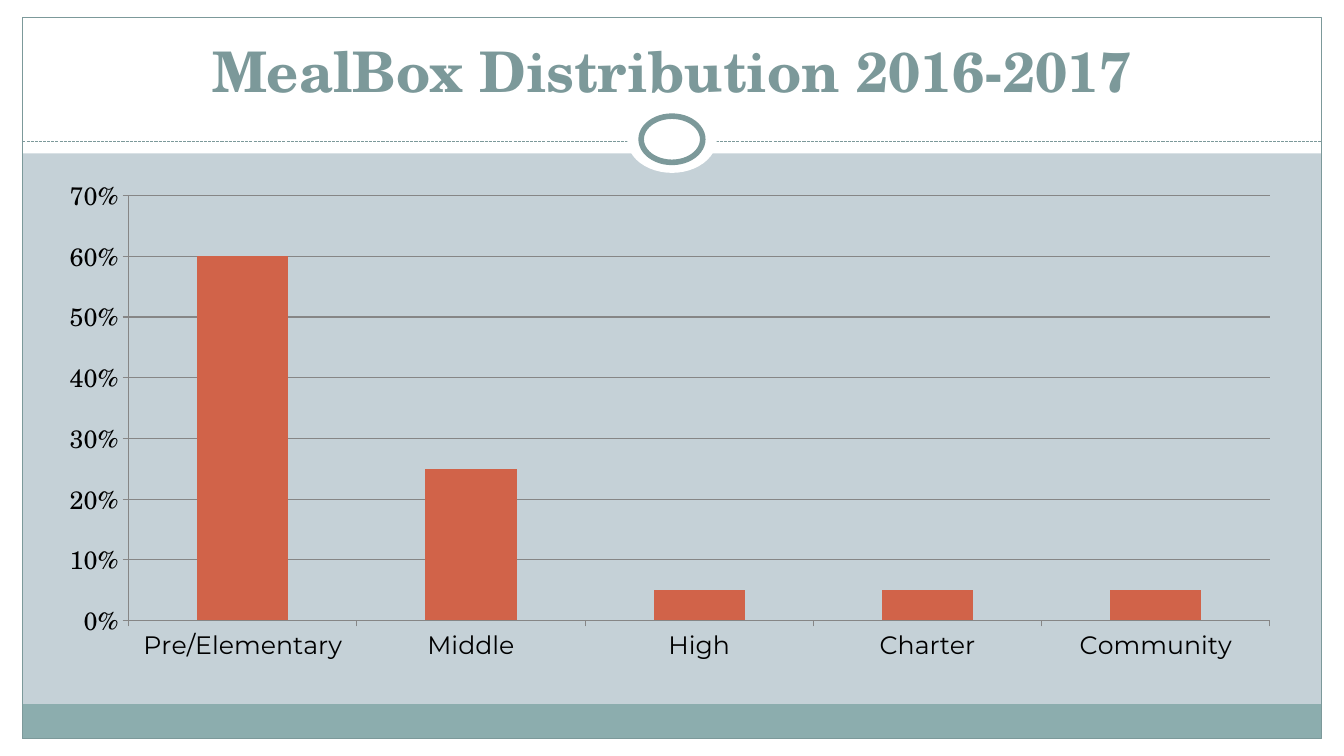
from dataclasses import dataclass

from lxml import etree
from pptx import Presentation
from pptx import util as u
from pptx.chart.data import CategoryChartData
from pptx.dml.color import RGBColor
from pptx.enum import chart as charts
from pptx.enum import dml, shapes, text
from pptx.oxml import parse_xml
from pptx.oxml.ns import qn

Pt = u.Pt
WHITE = RGBColor(0xFF, 0xFF, 0xFF)
BLACK = RGBColor(0, 0, 0)
MIST = RGBColor(0xC5, 0xD1, 0xD7)
SAGE = RGBColor(0x8C, 0xAD, 0xAE)
TEAL = RGBColor(0x7C, 0x99, 0x9A)
RUST = RGBColor(0xD1, 0x63, 0x49)
GRAY = RGBColor(0x86, 0x86, 0x86)
SERIF, SANS = "TeX Gyre Schola", "Montserrat"

WIDTH, HEIGHT = 960, 540
MARGIN, TOP, BOTTOM = 16, 12.24, 527.76
INNER = WIDTH - 2 * MARGIN
RULE_Y = 100.8
RECT, OVAL = shapes.MSO_SHAPE.RECTANGLE, shapes.MSO_SHAPE.OVAL


@dataclass
class Panel:
    left: float
    top: float
    width: float
    height: float
    fill: RGBColor | None = WHITE
    line_width: float = 0
    kind: shapes.MSO_SHAPE = RECT


def medallion(width: float, height: float, line_width: float = 0) -> Panel:
    """An ellipse centred on the dashed rule."""
    return Panel((WIDTH - width) / 2, 99.5 - height / 2, width, height,
                 line_width=line_width, kind=OVAL)


FRAME = [
    Panel(0, BOTTOM, WIDTH, HEIGHT - BOTTOM),
    Panel(0, 0, WIDTH, 109.5),
    Panel(0, 0, MARGIN, HEIGHT),
    Panel(WIDTH - MARGIN, 0, MARGIN, HEIGHT),
    Panel(MARGIN, 503, INNER, BOTTOM - 503, SAGE),
    Panel(MARGIN, TOP, INNER, BOTTOM - TOP, None, 0.75),
]
MEDALLIONS = [medallion(64, 48), medallion(44, 33, 4)]
SHARES = {"Pre/Elementary": 0.6, "Middle": 0.25, "High": 0.05,
          "Charter": 0.05, "Community": 0.05}
PLOT_LAYOUT = {"x": 0.067, "y": 0.055, "w": 0.913, "h": 0.843}


def assign(target, values: dict) -> None:
    for name, value in values.items():
        setattr(target, name, value)


def set_font(font, color: RGBColor, **values) -> None:
    assign(font, values)
    font.color.rgb = color


def set_line(line, color: RGBColor, width: float) -> None:
    line.color.rgb = color
    line.width = Pt(width)


def draw_panel(page, panel: Panel) -> None:
    box = page.shapes.add_shape(panel.kind, Pt(panel.left), Pt(panel.top),
                                Pt(panel.width), Pt(panel.height))
    box.shadow.inherit = False
    if panel.fill is None:
        box.fill.background()
    else:
        box.fill.solid()
        box.fill.fore_color.rgb = panel.fill
    if panel.line_width:
        set_line(box.line, TEAL, panel.line_width)
    else:
        box.line.fill.background()


def draw_rule(page) -> None:
    rule = page.shapes.add_connector(
        shapes.MSO_CONNECTOR.STRAIGHT, Pt(MARGIN), Pt(RULE_Y),
        Pt(WIDTH - MARGIN), Pt(RULE_Y))
    set_line(rule.line, TEAL, 0.75)
    rule.line.dash_style = dml.MSO_LINE.SQUARE_DOT
    etree.SubElement(rule.element.spPr, qn("a:effectLst"))


def draw_title(page, wording: str) -> None:
    title = page.shapes.title
    assign(title, {"left": Pt(32), "top": Pt(18),
                   "width": Pt(896), "height": Pt(60)})
    frame = title.text_frame
    assign(frame, {"vertical_anchor": text.MSO_ANCHOR.BOTTOM,
                   "word_wrap": True, "auto_size": text.MSO_AUTO_SIZE.NONE})
    para = frame.paragraphs[0]
    para.alignment = text.PP_ALIGN.CENTER
    span = para.add_run()
    span.text = wording
    set_font(span.font, TEAL, name=SERIF, size=Pt(40), bold=True)
    # Bring the title in front of the white band
    title.element.getparent().append(title.element)


def draw_chart(page) -> None:
    data = CategoryChartData(number_format="0%")
    data.categories = list(SHARES)
    data.add_series("Series 1", list(SHARES.values()))
    chart = page.shapes.add_chart(
        charts.XL_CHART_TYPE.COLUMN_CLUSTERED,
        Pt(32), Pt(120), Pt(893), Pt(360), data).chart
    assign(chart, {"has_legend": False, "has_title": False})
    set_font(chart.font, BLACK, name=SERIF, size=Pt(18))

    # Columns
    plot = chart.plots[0]
    assign(plot, {"gap_width": 150, "vary_by_categories": False})
    fill = plot.series[0].format.fill
    fill.solid()
    fill.fore_color.rgb = RUST

    # Axes
    shares = chart.value_axis
    assign(shares, {"minimum_scale": 0, "maximum_scale": 0.7,
                    "major_unit": 0.1, "has_major_gridlines": True})
    assign(shares.tick_labels, {"number_format": "0%",
                                "number_format_is_linked": False})
    set_line(shares.major_gridlines.format.line, GRAY, 0.75)
    for axis, face in ((shares, SERIF), (chart.category_axis, SANS)):
        axis.major_tick_mark = charts.XL_TICK_MARK.OUTSIDE
        set_line(axis.format.line, GRAY, 0.75)
        set_font(axis.tick_labels.font, BLACK, name=face, size=Pt(18))

    # Fixed inner plot area
    sizes = "".join(f'<c:{key} val="{value}"/>'
                    for key, value in PLOT_LAYOUT.items())
    layout = parse_xml(
        '<c:layout xmlns:c="http://schemas.openxmlformats.org/drawingml/2006/chart">'
        '<c:manualLayout><c:layoutTarget val="inner"/>'
        '<c:xMode val="edge"/><c:yMode val="edge"/>'
        f'{sizes}</c:manualLayout></c:layout>')
    area = chart.element.find(".//" + qn("c:plotArea"))
    for old in area.findall(qn("c:layout")):
        area.remove(old)
    area.insert(0, layout)


def main() -> None:
    deck = Presentation()
    assign(deck, {"slide_width": Pt(WIDTH), "slide_height": Pt(HEIGHT)})
    page = deck.slides.add_slide(deck.slide_layouts[5])
    page.background.fill.solid()
    page.background.fill.fore_color.rgb = MIST

    # Frame, rule and medallion
    for panel in FRAME:
        draw_panel(page, panel)
    draw_rule(page)
    for panel in MEDALLIONS:
        draw_panel(page, panel)

    # Content
    draw_title(page, "MealBox Distribution 2016-2017")
    draw_chart(page)
    deck.save("out.pptx")


if __name__ == "__main__":
    main()
